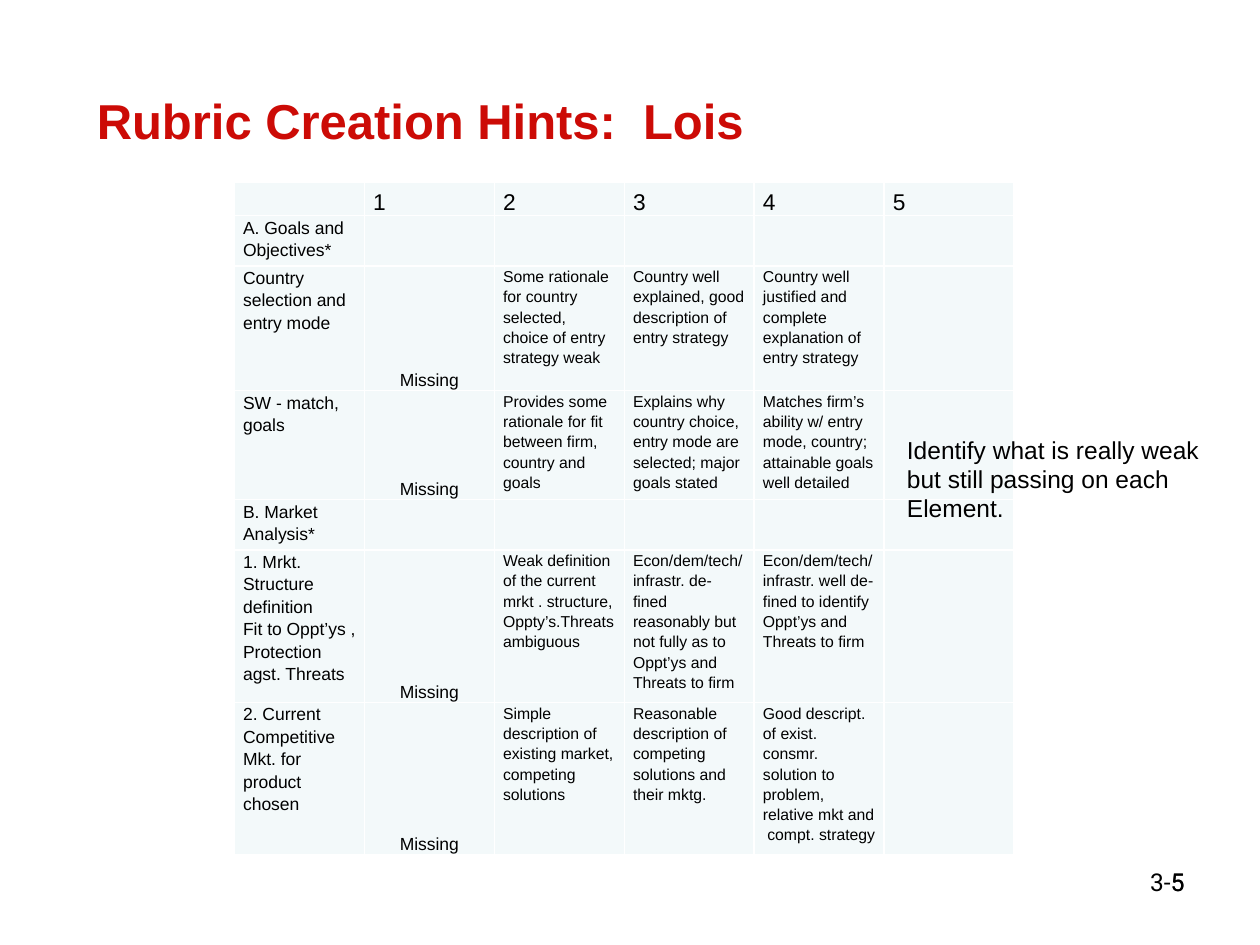
from dataclasses import dataclass
from typing import Optional

from lxml import etree
from pptx import Presentation
from pptx.dml.color import RGBColor
from pptx.enum.text import MSO_ANCHOR, PP_ALIGN
from pptx.oxml.ns import qn
from pptx.util import Inches, Pt

TOP, MIDDLE, BOTTOM = MSO_ANCHOR.TOP, MSO_ANCHOR.MIDDLE, MSO_ANCHOR.BOTTOM
LEFT, CENTER, RIGHT = PP_ALIGN.LEFT, PP_ALIGN.CENTER, PP_ALIGN.RIGHT
SLIDE_W, SLIDE_H = Inches(10), Inches(7.5)


@dataclass(frozen=True)
class Theme:
    title: str = "CC0B06"
    ink: str = "000000"
    cell: str = "F3F9FA"
    border: str = "FFFFFF"
    font: str = "Arial"
    number_font: str = "Roboto"
    title_size: int = 28
    note_size: int = 14
    score_size: int = 13
    element_size: int = 10
    detail_size: int = 9


THEME = Theme()


@dataclass(frozen=True)
class Style:
    size: int
    color: str = THEME.ink
    font: str = THEME.font
    bold: bool = False
    align: PP_ALIGN = LEFT
    anchor: MSO_ANCHOR = TOP
    line_spacing: Optional[float] = None
    space_after: Optional[float] = None


@dataclass(frozen=True)
class Area:
    left: float
    top: float
    width: float
    height: float

    def lengths(self) -> tuple:
        return across(self.left), down(self.top), across(self.width), down(self.height)


@dataclass(frozen=True)
class Criterion:
    height: float
    element: str
    levels: tuple = ("",) * 5


def across(percent: float) -> int:
    return round(SLIDE_W * percent / 100)


def down(percent: float) -> int:
    return round(SLIDE_H * percent / 100)


def add_run(paragraph, text: str, style: Style) -> None:
    run = paragraph.add_run()
    run.text = text
    run.font.size = Pt(style.size)
    run.font.name = style.font
    run.font.bold = style.bold
    run.font.color.rgb = RGBColor.from_string(style.color)


def write(frame, text: str, style: Style) -> None:
    for index, line in enumerate(text.split("\n")):
        paragraph = frame.add_paragraph() if index else frame.paragraphs[0]
        paragraph.alignment = style.align
        paragraph.line_spacing = style.line_spacing
        for part_index, part in enumerate(line.split("\v")):
            if part_index:
                paragraph.add_line_break()
            add_run(paragraph, part, style)
    if style.space_after is not None:
        paragraph.space_after = Pt(style.space_after)


def add_label(slide, area: Area, text: str, style: Style, wrap: bool = True) -> None:
    frame = slide.shapes.add_textbox(*area.lengths()).text_frame
    frame.word_wrap = wrap
    frame.vertical_anchor = style.anchor
    write(frame, text, style)


def add_borders(cell) -> None:
    properties = cell._tc.get_or_add_tcPr()
    for side in ("a:lnL", "a:lnR", "a:lnT", "a:lnB"):
        line = etree.SubElement(properties, qn(side), w=str(Pt(1)))
        fill = etree.SubElement(line, qn("a:solidFill"))
        etree.SubElement(fill, qn("a:srgbClr"), val=THEME.border)


def fill_cell(cell, text: str, style: Style) -> None:
    cell.margin_left = cell.margin_right = Inches(0.07)
    cell.margin_top = cell.margin_bottom = 0
    cell.vertical_anchor = style.anchor
    add_borders(cell)
    cell.fill.solid()
    cell.fill.fore_color.rgb = RGBColor.from_string(THEME.cell)
    if text:
        write(cell.text_frame, text, style)
    else:
        etree.SubElement(cell.text_frame.paragraphs[0]._p, qn("a:endParaRPr"),
                         sz=str(style.size * 100))


def cell_style(row: int, column: int, text: str) -> Style:
    spacing = {"line_spacing": 1.15, "space_after": 2.8}
    if row == 0:
        return Style(THEME.score_size, anchor=BOTTOM, **spacing)
    if column == 0:
        return Style(THEME.element_size, **spacing)
    if text == MISSING:
        return Style(THEME.element_size, align=CENTER, anchor=BOTTOM, **spacing)
    return Style(THEME.detail_size, **spacing)


def add_rubric(slide, area: Area, criteria: tuple) -> None:
    columns = 1 + len(criteria[0].levels)
    table = slide.shapes.add_table(len(criteria), columns, *area.lengths()).table
    table.first_row = table.horz_banding = False
    for column in table.columns:
        column.width = across(area.width / columns)
    for row, criterion in enumerate(criteria):
        table.rows[row].height = down(criterion.height)
        for column, text in enumerate((criterion.element, *criterion.levels)):
            fill_cell(table.cell(row, column), text, cell_style(row, column, text))


MISSING = "Missing"
RUBRIC = (
    Criterion(3.47, "", ("1", "2", "3", "4", "5")),
    Criterion(5.33, "A. Goals and Objectives*"),
    Criterion(13.2, "Country selection and entry mode", (
        MISSING,
        "Some rationale for country selected, choice of entry strategy weak",
        "Country well explained, good description of entry strategy",
        "Country well justified and complete explanation of entry strategy", "")),
    Criterion(10.93, "SW - match, goals", (
        MISSING,
        "Provides some rationale for fit between firm, country and goals",
        "Explains why country choice, entry mode are selected; major goals stated",
        "Matches firm’s ability w/ entry mode, country; attainable goals well detailed", "")),
    Criterion(5.33, "B. Market Analysis*"),
    Criterion(14.67, "1. Mrkt. Structure definition\nFit to Oppt’ys , Protection agst. Threats", (
        MISSING,
        "Weak definition of the current mrkt . structure, Oppty’s.Threats\vambiguous",
        "Econ/dem/tech/ infrastr. de-fined reasonably but not fully as to Oppt’ys and Threats to firm",
        "Econ/dem/tech/ infrastr. well de-fined to identify Oppt’ys and Threats to firm", "")),
    Criterion(13.2, "2. Current Competitive Mkt. for product chosen", (
        MISSING,
        "Simple description of existing market, competing solutions",
        "Reasonable description of competing solutions and their mktg.",
        "Good descript. of exist. consmr. solution to problem, relative mkt and  compt. strategy", "")),
)


def main() -> None:
    presentation = Presentation()
    presentation.slide_width, presentation.slide_height = SLIDE_W, SLIDE_H
    slide = presentation.slides.add_slide(presentation.slide_layouts[6])

    number_style = Style(THEME.note_size, font=THEME.number_font, align=RIGHT)
    for number in ("3-5", "5"):
        add_label(slide, Area(71.7, 91.07, 23.3, 6.93), number, number_style)
    add_label(slide, Area(6.7, 7.73, 68.3, 10), "Rubric Creation Hints:  Lois",
              Style(THEME.title_size, THEME.title, bold=True, anchor=MIDDLE))
    add_rubric(slide, Area(18.6, 19.33, 61.9, 66.13), RUBRIC)
    add_label(slide, Area(71, 45.33, 29.3, 10.8),
              "Identify what is really weak\nbut still passing on each\nElement.",
              Style(THEME.note_size), wrap=False)
    presentation.save("out.pptx")


if __name__ == "__main__":
    main()
